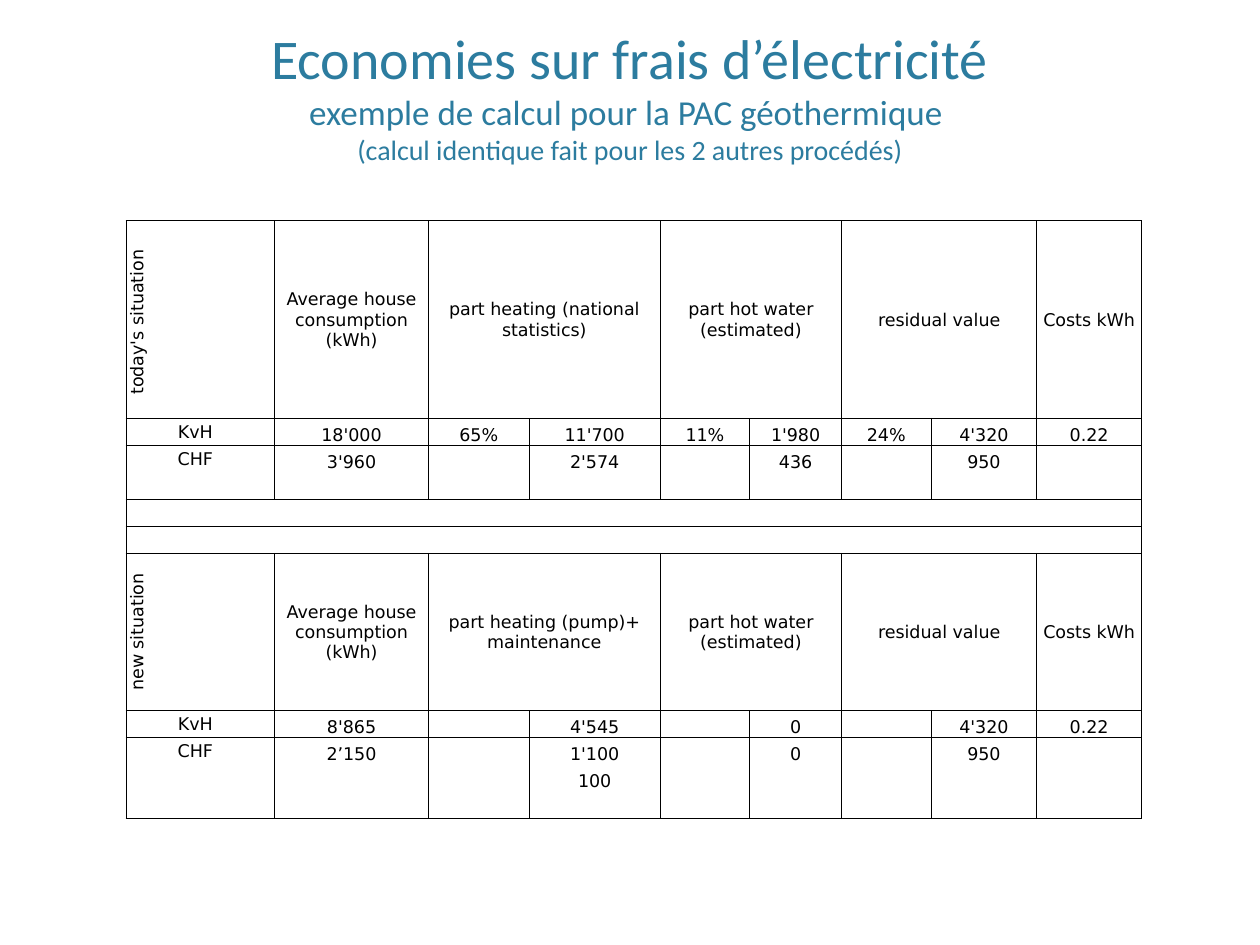
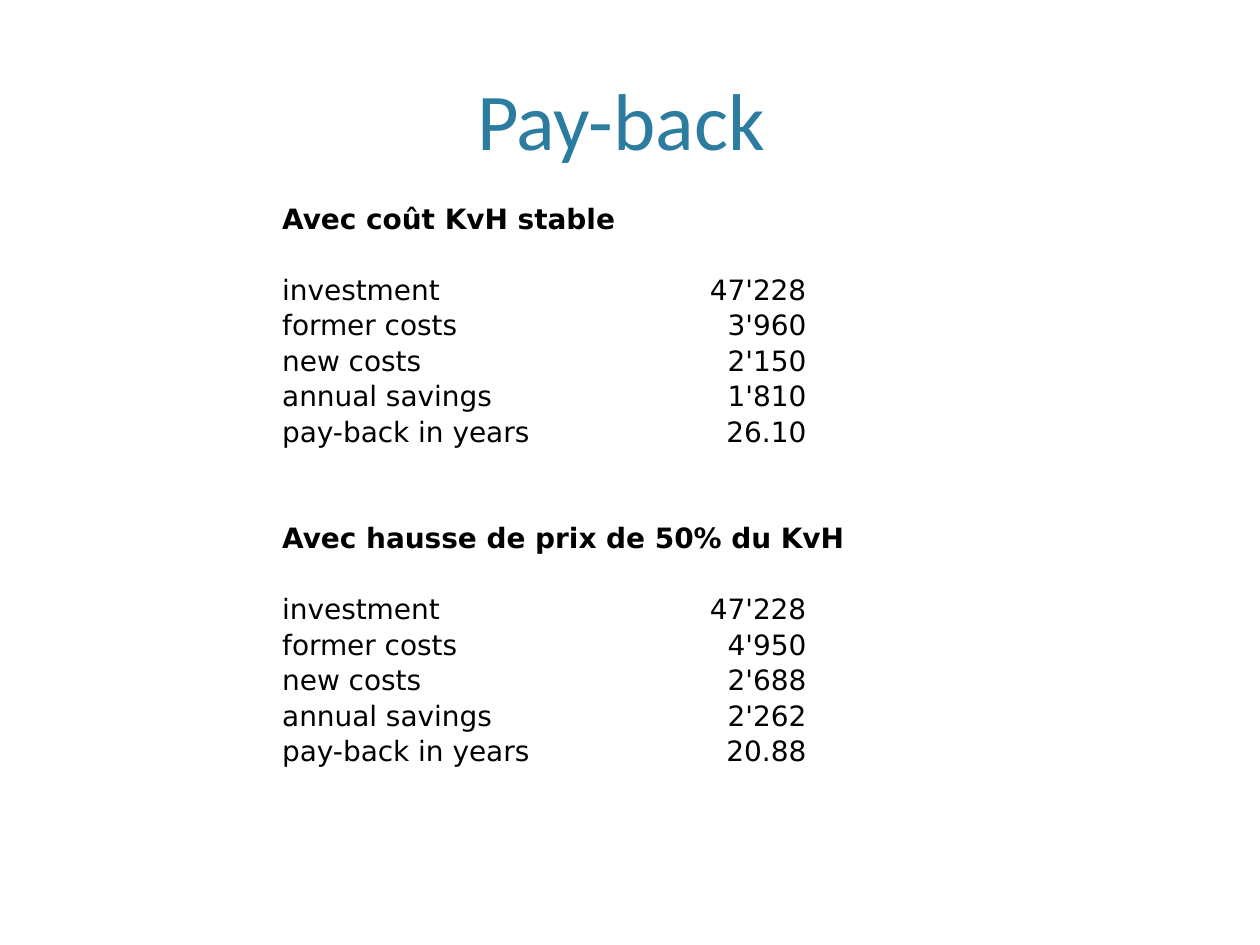
from copy import deepcopy

from lxml.etree import SubElement
from pptx import Presentation
from pptx.dml.color import RGBColor
from pptx.enum.text import MSO_ANCHOR as ANCHOR, MSO_AUTO_SIZE as AUTOSIZE, PP_ALIGN as ALIGN
from pptx.oxml.ns import qn
from pptx.util import Inches, Pt

COLORS = {"title": "2C7C9F", "ink": "000000"}
TITLE_FONT, TABLE_FONT = "Calibri", "DejaVu Sans"
PLAIN_TABLE_STYLE = "{2D5ABB26-0587-4C30-8999-92F81FD0307C}"

SLIDE_TITLES = [
    [("Economies sur frais d’électricité", 32),
     ("exemple de calcul pour la PAC géothermique ", 20),
     ("(calcul identique fait pour les 2 autres procédés)", 16)],
    [("Pay-back ", 46)],
]


def write(paragraph, text, size, font=TABLE_FONT, color="ink", bold=False, align=ALIGN.LEFT):
    """Add one formatted run; empty text only fixes the height of the line."""
    paragraph.alignment = align
    if not text:
        SubElement(paragraph._p, qn("a:endParaRPr"), sz=str(size * 100))
        return None
    run = paragraph.add_run()
    run.text = text
    run.font.size = Pt(size)
    run.font.name = font
    run.font.bold = bold
    run.font.color.rgb = RGBColor.from_string(COLORS[color])
    return run


def add_plain_table(slide, left, top, widths, heights):
    """Add a table without style, fills or borders, with tight cell margins."""
    frame = slide.shapes.add_table(len(heights), len(widths), Inches(left), Inches(top),
                                   Inches(sum(widths)), Inches(sum(heights)))
    table = frame.table
    table.first_row = table.horz_banding = False
    table._tbl.tblPr.find(qn("a:tableStyleId")).text = PLAIN_TABLE_STYLE
    for column, width in zip(table.columns, widths):
        column.width = Inches(width)
    for row, height in zip(table.rows, heights):
        row.height = Inches(height)
    for cell in table.iter_cells():
        cell.margin_left = cell.margin_right = cell.margin_top = Inches(0.01)
        cell.margin_bottom = 0
        cell.vertical_anchor = ANCHOR.BOTTOM
        cell.fill.background()
    return table


prs = Presentation()
prs.slide_width, prs.slide_height = Inches(10), Inches(7.5)

slides = []
for title_lines in SLIDE_TITLES:
    slide = prs.slides.add_slide(prs.slide_layouts[5])
    slides.append(slide)
    title = slide.shapes.title
    title.left, title.top = Inches(0.6), Inches(0.12)
    title.width, title.height = Inches(8.8), Inches(1.21)
    title_frame = title.text_frame
    title_frame.auto_size = AUTOSIZE.NONE
    title_frame.vertical_anchor = ANCHOR.BOTTOM
    title_frame.margin_bottom = Inches(0.01)
    heading = title_frame.paragraphs[0]
    for number, (line, size) in enumerate(title_lines):
        if number:
            heading.add_line_break()
            heading._p[-1].append(deepcopy(run._r.rPr))
        run = write(heading, line, size, TITLE_FONT, "title", align=ALIGN.CENTER)
savings_slide, payback_slide = slides

# Electricity savings: header rows 0 and 6, each followed by its figures
HEADER_ROWS, LAST_ROWS, SPACER_ROWS = (0, 6), (3, 5, 10), (4, 5)
PAIRED_COLUMNS = (2, 4, 6)
savings_rows = [
    ["today's situation ", "Average house consumption (kWh)",
     "part heating (national statistics)", "", "part hot water (estimated)", "",
     "residual value", "", "Costs kWh"],
    ["KvH", "18'000", "65%", "11'700", "11%", "1'980", "24%", "4'320", "0.22"],
    ["CHF", "3'960", "", "2'574", "", "436", "", "950", ""],
    [""] * 9,
    [""] * 9,
    [""] * 9,
    ["new situation", "Average house consumption (kWh)",
     "part heating (pump)+ maintenance", "", "part hot water (estimated)", "",
     "residual value", "", "Costs kWh"],
    ["KvH", "8'865", "", "4'545", "", "0", "", "4'320", "0.22"],
    ["CHF", "2’150", "", "1'100", "", "0", "", "950", ""],
    ["", "", "", "100", "", "", "", "", ""],
    [""] * 9,
]
figure_height = 1.93 / 9
savings_heights = [figure_height] * len(savings_rows)
savings_heights[0], savings_heights[6] = 1.57, 1.25
savings = add_plain_table(savings_slide, 1, 1.75,
                          [1.18, 1.22, 0.8, 1.04, 0.71, 0.73, 0.71, 0.84, 0.83],
                          savings_heights)

for r, row in enumerate(savings_rows):
    is_header = r in HEADER_ROWS
    for c, text in enumerate(row):
        cell = savings.cell(r, c)
        write(cell.text_frame.paragraphs[0], text, 10, align=ALIGN.CENTER)
        if is_header or c == 0:
            cell.vertical_anchor = ANCHOR.MIDDLE
        if c == 0 and not is_header:
            cell.margin_right = Inches(0.09)

        # Figures are boxed by column, the spacer as a whole, new hot water as a pair
        spacer = r in SPACER_ROWS
        open_pair = r > 6
        borders = {
            "L": c == 0 or not (spacer or open_pair and c == 5),
            "R": c == 8 or not (spacer or open_pair and c == 4),
            "T": is_header or r - 1 in HEADER_ROWS + LAST_ROWS,
            "B": is_header or r in LAST_ROWS,
        }
        properties = cell._tc.get_or_add_tcPr()
        if is_header and c == 0:
            properties.set("vert", "vert270")
        sides = [side for side, drawn in borders.items() if drawn]
        for position, side in enumerate(sides):
            border = SubElement(properties, qn(f"a:ln{side}"), w=str(Pt(0.5)))
            ink = SubElement(border, qn("a:solidFill"))
            SubElement(ink, qn("a:srgbClr"), val=COLORS["ink"])
            properties.insert(position, border)
    if is_header:
        for c in PAIRED_COLUMNS:
            savings.cell(r, c).merge(savings.cell(r, c + 1))

# Pay-back: two scenarios, nine rows apart
ROW_COUNT, SCENARIO_STEP = 16, 9
cost_labels = ["investment", "former costs", "new costs", "annual savings", "pay-back in years"]
scenarios = [
    ("Avec coût KvH stable", 2, ["47'228", "3'960", "2'150", "1'810", "26.10"]),
    ("Avec hausse de prix de 50% du KvH", 4, ["47'228", "4'950", "2'688", "2'262", "20.88"]),
]
payback = add_plain_table(payback_slide, 2.23, 1.59, [1.54, 1.6, 1.04, 1.36],
                          [4.44 / ROW_COUNT] * ROW_COUNT)
entries = {}
for number, (scenario, span, amounts) in enumerate(scenarios):
    first = number * SCENARIO_STEP
    entries[first, 0] = scenario, True, ALIGN.LEFT
    payback.cell(first, 0).merge(payback.cell(first, span - 1))
    for r, (label, amount) in enumerate(zip(cost_labels, amounts), first + 2):
        entries[r, 0] = label, False, ALIGN.LEFT
        entries[r, 2] = amount, False, ALIGN.RIGHT
        if label in cost_labels[3:]:
            payback.cell(r, 0).merge(payback.cell(r, 1))

for r in range(ROW_COUNT):
    for c in range(4):
        text, bold, align = entries.get((r, c), ("", False, ALIGN.LEFT))
        write(payback.cell(r, c).text_frame.paragraphs[0], text, 16, bold=bold, align=align)

prs.save("out.pptx")
